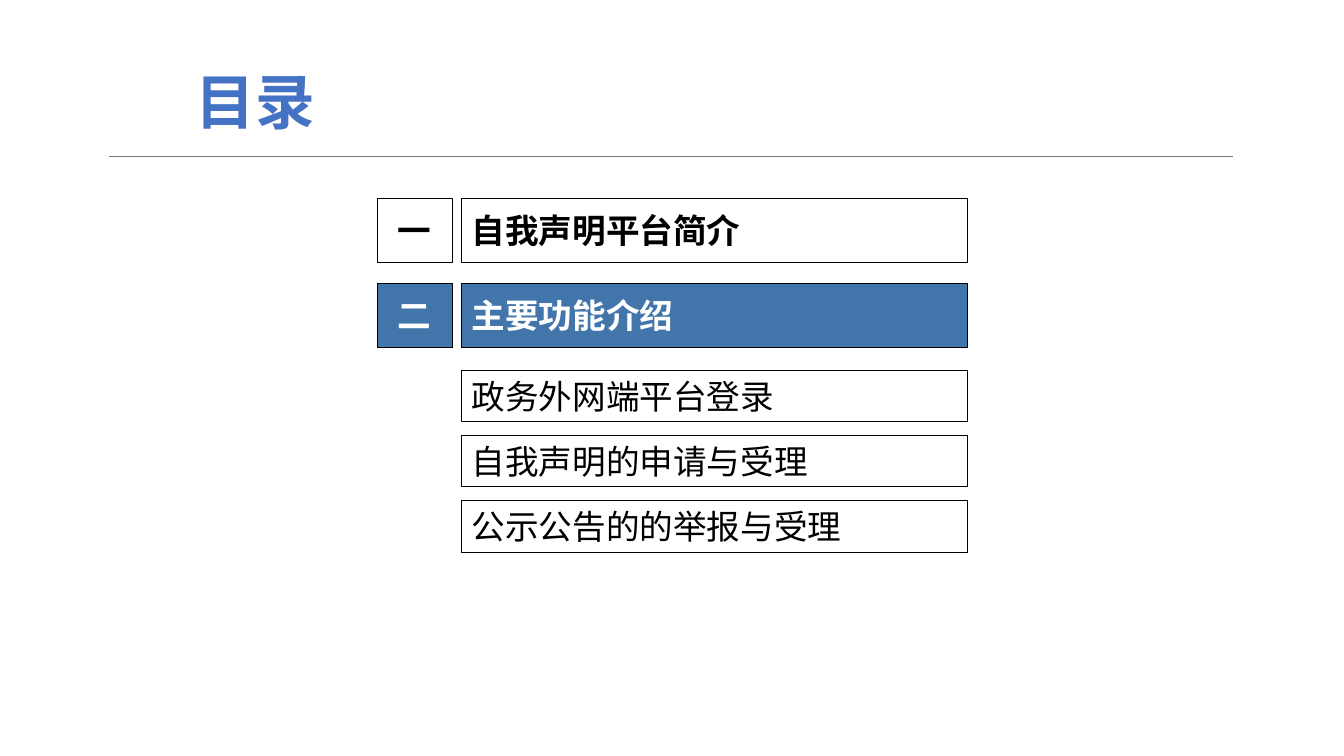
from dataclasses import dataclass
from typing import Optional

from pptx import Presentation, util as u
from pptx.dml.color import RGBColor
from pptx.enum import shapes, text
from pptx.oxml.ns import qn
from lxml import etree


@dataclass(frozen=True)
class Theme:
    font: str = "Times New Roman"
    title: RGBColor = RGBColor(0x44, 0x72, 0xC4)
    rule: RGBColor = RGBColor(0x76, 0x76, 0x76)
    active: RGBColor = RGBColor(0x42, 0x76, 0xAA)
    white: RGBColor = RGBColor(255, 255, 255)
    black: RGBColor = RGBColor(0, 0, 0)
    head_size: float = 42.7
    item_size: float = 24
    stroke: float = 0.5


@dataclass(frozen=True)
class Box:
    left: float
    top: float
    width: float
    height: float


@dataclass(frozen=True)
class Part:
    mark: str
    label: str
    active: bool = False


THEME = Theme()
PARTS = [Part("一", "自我声明平台简介"), Part("二", "主要功能介绍", True)]
TOPICS = ["政务外网端平台登录", "自我声明的申请与受理", "公示公告的的举报与受理"]

MARK_LEFT, MARK_WIDTH = 269.3, 54
ITEM_LEFT, ITEM_WIDTH = 329.8, 361
PART_TOP, PART_STEP, PART_HEIGHT = 141.8, 60.4, 45.6
TOPIC_TOP, TOPIC_STEP, TOPIC_HEIGHT = 264.3, 46.6, 36.7


def write(shape, words: str, size: float, color: RGBColor, bold: bool,
          align: text.PP_ALIGN, spacing: Optional[float] = None) -> None:
    frame = shape.text_frame
    frame.word_wrap = True
    frame.vertical_anchor = text.MSO_ANCHOR.MIDDLE
    frame.text = words
    para = frame.paragraphs[0]
    para.alignment = align
    para.line_spacing = spacing
    font = para.runs[0].font
    font.name, font.size, font.bold = THEME.font, u.Pt(size), bold
    font.color.rgb = color


def add_title(slide, words: str, box: Box) -> None:
    shape = slide.shapes.add_textbox(
        u.Pt(box.left), u.Pt(box.top), u.Pt(box.width), u.Pt(box.height))
    write(shape, words, THEME.head_size, THEME.title, True,
          text.PP_ALIGN.CENTER, 1.02)


def add_rule(slide, left: float, right: float, top: float) -> None:
    line = slide.shapes.add_connector(
        shapes.MSO_CONNECTOR.STRAIGHT,
        u.Pt(left), u.Pt(top), u.Pt(right), u.Pt(top))
    line.line.color.rgb = THEME.rule
    line.line.width = u.Pt(THEME.stroke)
    etree.SubElement(line._element.spPr, qn("a:effectLst"))


def add_cell(slide, words: str, box: Box, active: bool = False,
             bold: bool = False,
             align: text.PP_ALIGN = text.PP_ALIGN.LEFT) -> None:
    shape = slide.shapes.add_shape(
        shapes.MSO_SHAPE.RECTANGLE,
        u.Pt(box.left), u.Pt(box.top), u.Pt(box.width), u.Pt(box.height))
    shape.shadow.inherit = False
    shape.fill.solid()
    shape.fill.fore_color.rgb = THEME.active if active else THEME.white
    shape.line.color.rgb = THEME.black
    shape.line.width = u.Pt(THEME.stroke)
    ink = THEME.white if active else THEME.black
    write(shape, words, THEME.item_size, ink, bold, align)


def main() -> None:
    deck = Presentation()
    deck.slide_width, deck.slide_height = u.Pt(960), u.Pt(540)
    slide = deck.slides.add_slide(deck.slide_layouts[6])

    add_title(slide, "目录", Box(64, 45.4, 237, 51.8))
    add_rule(slide, 78, 880.6, 111.4)

    for row, part in enumerate(PARTS):
        top = PART_TOP + row * PART_STEP
        add_cell(slide, part.label,
                 Box(ITEM_LEFT, top, ITEM_WIDTH, PART_HEIGHT),
                 part.active, True)
        add_cell(slide, part.mark,
                 Box(MARK_LEFT, top, MARK_WIDTH, PART_HEIGHT),
                 part.active, True, text.PP_ALIGN.CENTER)

    for row, topic in enumerate(TOPICS):
        top = TOPIC_TOP + row * TOPIC_STEP
        add_cell(slide, topic, Box(ITEM_LEFT, top, ITEM_WIDTH, TOPIC_HEIGHT))

    deck.save("out.pptx")


if __name__ == "__main__":
    main()
